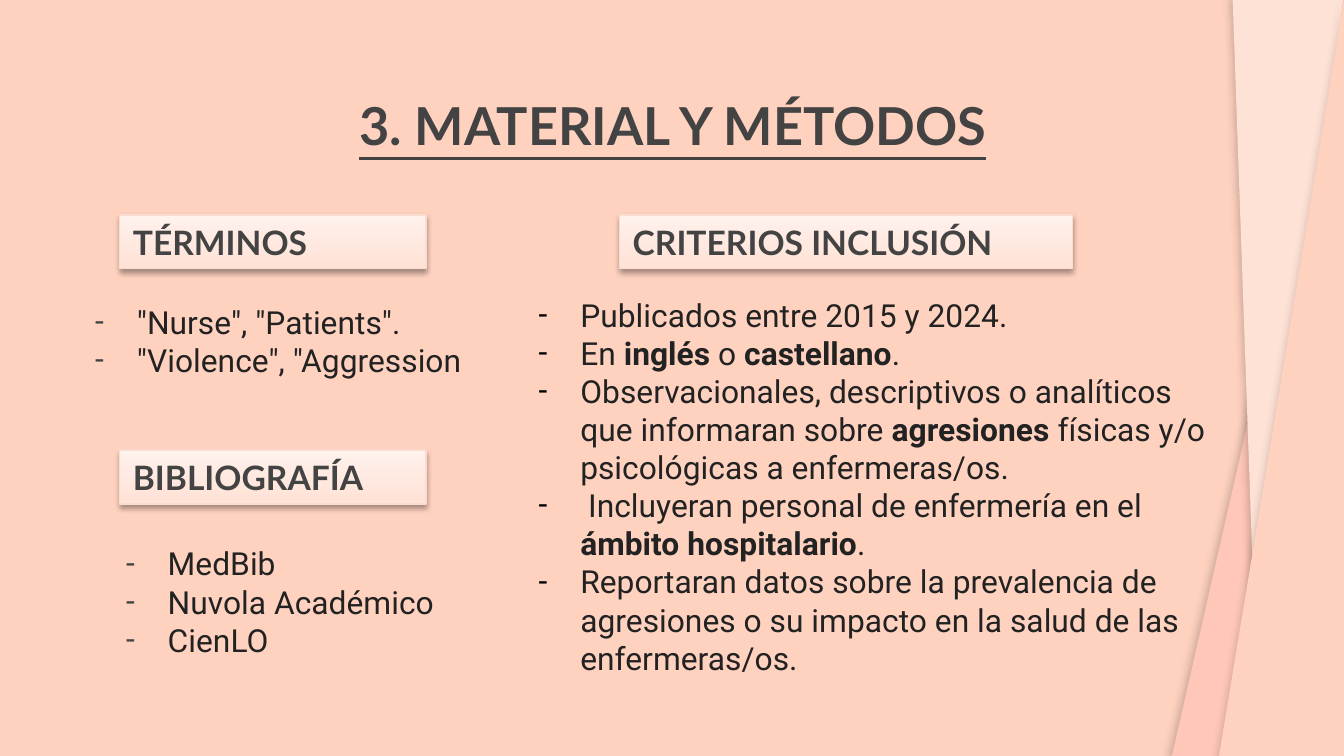
import pptx
import pptx.util
import pptx.dml.color
import pptx.enum.shapes
import pptx.enum.text
import pptx.oxml.ns
from lxml import etree

Inches, Pt = pptx.util.Inches, pptx.util.Pt
RGBColor = pptx.dml.color.RGBColor
PP_ALIGN = pptx.enum.text.PP_ALIGN
ANCHOR = pptx.enum.text.MSO_ANCHOR
qn = pptx.oxml.ns.qn

PEACH = RGBColor(0xFF, 0xD2, 0xC0)
SALMON = RGBColor(0xFF, 0xC7, 0xB7)
PALE = RGBColor(0xFF, 0xE2, 0xD6)
CREAM = RGBColor(0xFF, 0xF1, 0xEC)
EDGE = RGBColor(0xFA, 0xDD, 0xD0)
GREY = RGBColor(0x43, 0x43, 0x43)
INK = RGBColor(0x22, 0x22, 0x22)
BLACK = RGBColor(0, 0, 0)

HEADINGS = [
    ("TÉRMINOS", (0.89, 1.6, 2.28, 0.4)),
    ("BIBLIOGRAFÍA", (0.89, 3.35, 2.28, 0.4)),
    ("CRITERIOS INCLUSIÓN", (4.61, 1.6, 3.37, 0.4)),
]
# Each item is a list of runs; every second run is bold.
TERMS = [['"Nurse", "Patients".'], ['"Violence", "Aggression']]
SOURCES = [["MedBib"], ["Nuvola Académico"], ["CienLO"]]
CRITERIA = [
    ["Publicados entre 2015 y 2024."],
    ["En ", "inglés ", "o ", "castellano", "."],
    ["Observacionales, descriptivos o analíticos que informaran sobre ",
     "agresiones ", "físicas y/o psicológicas a enfermeras/os."],
    [" Incluyeran personal de enfermería en el ", "ámbito hospitalario", "."],
    ["Reportaran datos sobre la prevalencia de agresiones o su impacto "
     "en la salud de las enfermeras/os."],
]


def add_shadow(sp, alpha, blur, dist, angle):
    """Give a black outer shadow; alpha in percent, blur and dist in points."""
    sp.shadow.inherit = False
    effects = sp._element.spPr.find(qn("a:effectLst"))
    outer = etree.SubElement(
        effects, qn("a:outerShdw"), blurRad=str(Pt(blur)), dist=str(Pt(dist)),
        dir=str(angle * 60000), algn="bl", rotWithShape="0")
    color = etree.SubElement(outer, qn("a:srgbClr"), val=str(BLACK))
    etree.SubElement(color, qn("a:alpha"), val=str(alpha * 1000))


def add_run(p, text, font, size, color, bold=False):
    r = p.add_run()
    r.text = text
    r.font.name = font
    r.font.size = Pt(size)
    r.font.color.rgb = color
    r.font.bold = bold
    return r


def add_textbox(s, box, inset):
    tf = s.shapes.add_textbox(*map(Inches, box)).text_frame
    tf.word_wrap = True
    tf.margin_left = tf.margin_right = Inches(inset[0])
    tf.margin_top = tf.margin_bottom = Inches(inset[1])
    return tf


def add_paper_fold(s, points, color, dist, angle):
    corners = [(Inches(x), Inches(y)) for x, y in points]
    builder = s.shapes.build_freeform(*corners[0])
    builder.add_line_segments(corners[1:], close=True)
    sp = builder.convert_to_shape()
    sp.fill.solid()
    sp.fill.fore_color.rgb = color
    sp.line.fill.background()
    add_shadow(sp, 18, 4.5, dist, angle)


def add_title(s, box, text):
    p = add_textbox(s, box, (0.1, 0.1)).paragraphs[0]
    p.alignment = PP_ALIGN.CENTER
    add_run(p, text, "Lato", 28, GREY, True).font.underline = True


def add_heading(s, box, text):
    sp = s.shapes.add_shape(
        pptx.enum.shapes.MSO_SHAPE.RECTANGLE, *map(Inches, box))
    sp.fill.gradient()
    sp.fill.gradient_angle = 90
    for stop, color in zip(sp.fill.gradient_stops, (PALE, CREAM)):
        stop.color.rgb = color
    sp.line.color.rgb = EDGE
    sp.line.width = Pt(0.75)
    add_shadow(sp, 35, 3.1, 1.8, 90)
    tf = sp.text_frame
    tf.vertical_anchor = ANCHOR.MIDDLE
    p = tf.paragraphs[0]
    p.alignment = PP_ALIGN.LEFT
    add_run(p, text, "Lato", 18, GREY, True)


def add_dash_list(s, box, items, inset, indent, align, dash_color):
    tf = add_textbox(s, box, inset)
    for i, runs in enumerate(items):
        p = tf.add_paragraph() if i else tf.paragraphs[0]
        p.alignment = align
        pPr = p._p.get_or_add_pPr()
        pPr.set("marL", str(Inches(indent)))
        pPr.set("indent", str(Inches(-0.31)))
        color = etree.SubElement(pPr, qn("a:buClr"))
        etree.SubElement(color, qn("a:srgbClr"), val=str(dash_color))
        etree.SubElement(pPr, qn("a:buFont"), typeface="Roboto")
        etree.SubElement(pPr, qn("a:buChar"), char="-")
        for j, text in enumerate(runs):
            add_run(p, text, "Roboto", 17, INK, j % 2 == 1)


def main():
    prs = pptx.Presentation()
    prs.slide_width = Inches(10)
    prs.slide_height = prs.slide_width * 9 // 16
    s = prs.slides.add_slide(prs.slide_layouts[6])
    s.background.fill.solid()
    s.background.fill.fore_color.rgb = PEACH

    bottom = prs.slide_height / Inches(1)
    add_paper_fold(s, [(10, 0), (8.72, bottom), (9.09, bottom)],
                   SALMON, 3, 160)
    add_paper_fold(s, [(9.17, -0.06), (9.37, bottom), (10, -0.06)],
                   PALE, 3, 120)
    add_paper_fold(s, [(10, bottom), (10, 0), (9.07, bottom)],
                   PEACH, 2.2, 120)

    add_title(s, (0.79, 0.59, 8.43, 0.52), "3. MATERIAL Y MÉTODOS")
    for text, box in HEADINGS:
        add_heading(s, box, text)
    for box, items in (((0.43, 2.15, 3.15, 0.67), TERMS),
                       ((0.66, 3.95, 2.76, 0.67), SOURCES)):
        add_dash_list(s, box, items, (0.1, 0.1), 0.49, PP_ALIGN.JUSTIFY, GREY)
    add_dash_list(s, (3.91, 2.15, 5.17, 3.2), CRITERIA, (0.1, 0.05), 0.31,
                  PP_ALIGN.LEFT, BLACK)
    prs.save("out.pptx")


if __name__ == "__main__":
    main()
